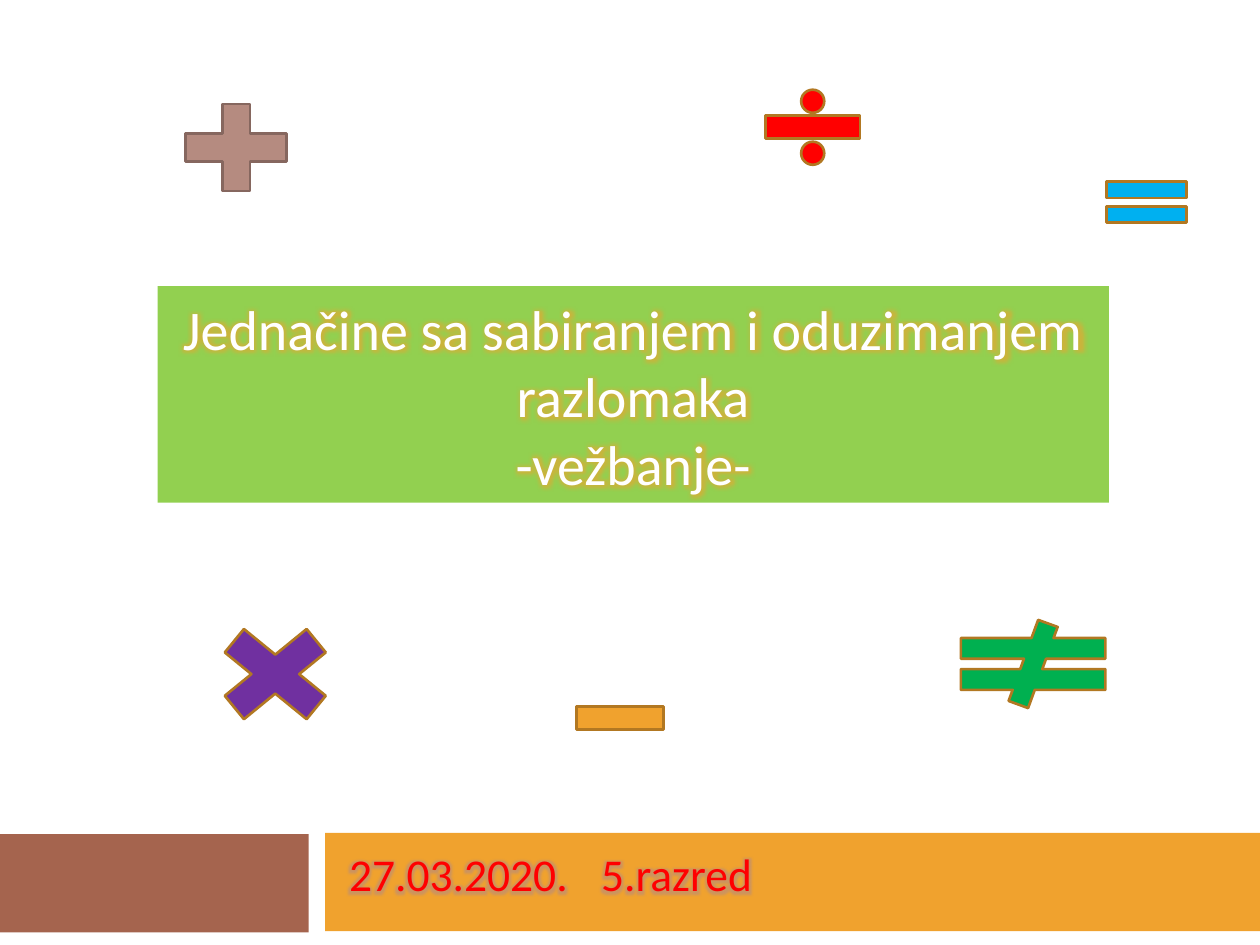
"""Build the title slide of a lesson on equations with fractions."""
from dataclasses import dataclass

from lxml import etree
from pptx import Presentation
from pptx.dml.color import RGBColor
from pptx.enum.shapes import MSO_SHAPE
from pptx.enum.text import MSO_ANCHOR, MSO_AUTO_SIZE, PP_ALIGN
from pptx.oxml.ns import qn
from pptx.util import Inches, Pt

RECTANGLE = MSO_SHAPE.RECTANGLE
PLUS = MSO_SHAPE.MATH_PLUS
MINUS = MSO_SHAPE.MATH_MINUS
MULTIPLY = MSO_SHAPE.MATH_MULTIPLY
DIVIDE = MSO_SHAPE.MATH_DIVIDE
EQUAL = MSO_SHAPE.MATH_EQUAL
NOT_EQUAL = MSO_SHAPE.MATH_NOT_EQUAL
LEFT, CENTER = PP_ALIGN.LEFT, PP_ALIGN.CENTER
MIDDLE, BOTTOM = MSO_ANCHOR.MIDDLE, MSO_ANCHOR.BOTTOM
NO_AUTOFIT = MSO_AUTO_SIZE.NONE

FONT = "Calibri"
COLORS = {
    "brown": "A5644E",
    "orange": "F0A22E",
    "dark orange": "B27822",
    "lime": "92D050",
    "rose": "B58B80",
    "dark rose": "86675F",
    "purple": "7030A0",
    "red": "FF0000",
    "blue": "00B0F0",
    "green": "00B050",
    "white": "FFFFFF",
}


@dataclass
class Figure:
    """A preset shape with its place in inches and its colours."""

    kind: MSO_SHAPE
    left: float
    top: float
    width: float
    height: float
    fill: str
    line: str = ""


@dataclass
class Caption:
    """The text, place and look of a placeholder."""

    text: str
    left: float
    top: float
    width: float
    height: float
    size: int
    color: str
    glow: str
    align: PP_ALIGN
    anchor: MSO_ANCHOR


BANDS = [
    Figure(RECTANGLE, -0.01, 6.62, 2.46, 0.78, "brown"),
    Figure(RECTANGLE, 2.58, 6.61, 7.42, 0.78, "orange"),
]
SYMBOLS = [
    Figure(PLUS, 1.33, 0.7, 1.09, 0.94, "rose", "dark rose"),
    Figure(MINUS, 4.45, 5.31, 0.94, 0.78, "orange", "dark orange"),
    Figure(MULTIPLY, 1.56, 4.84, 1.25, 1.02, "purple", "dark orange"),
    Figure(DIVIDE, 5.94, 0.62, 1.02, 0.78, "red", "dark orange"),
    Figure(EQUAL, 8.67, 1.33, 0.86, 0.55, "blue", "dark orange"),
    Figure(NOT_EQUAL, 7.42, 4.92, 1.56, 0.7, "green", "dark orange"),
]
TITLE = Caption("Jednačine sa sabiranjem i oduzimanjem razlomaka\v-vežbanje-",
                1.25, 2.27, 7.55, 1.72, 32, "white", "orange", CENTER, BOTTOM)
SUBTITLE = Caption("27.03.2020.\t5.razred",
                   2.67, 6.56, 7.33, 0.75, 26, "red", "rose", LEFT, MIDDLE)


def rgb(name: str) -> RGBColor:
    """Return the named colour."""
    return RGBColor.from_string(COLORS[name])


def draw_figure(page, figure: Figure) -> None:
    """Add one filled shape, outlined if it names a line colour."""
    shape = page.shapes.add_shape(
        figure.kind, Inches(figure.left), Inches(figure.top),
        Inches(figure.width), Inches(figure.height))
    shape.shadow.inherit = False
    shape.fill.solid()
    shape.fill.fore_color.rgb = rgb(figure.fill)
    if figure.line:
        shape.line.color.rgb = rgb(figure.line)
        shape.line.width = Pt(1.5)
    else:
        shape.line.fill.background()


def add_glow(span, color: str) -> None:
    """Give a run a soft coloured glow."""
    effects = etree.Element(qn("a:effectLst"))
    glow = etree.SubElement(effects, qn("a:glow"), rad=str(Pt(8)))
    tint = etree.SubElement(glow, qn("a:srgbClr"), val=COLORS[color])
    etree.SubElement(tint, qn("a:alpha"), val="60000")
    span.font.fill._xPr.find(qn("a:solidFill")).addnext(effects)


def add_tab_stop(para, position: float) -> None:
    """Set a left tab stop, in inches from the text edge."""
    stops = etree.SubElement(para._p.get_or_add_pPr(), qn("a:tabLst"))
    etree.SubElement(stops, qn("a:tab"), pos=str(Inches(position)), algn="l")


def fill_placeholder(box, caption: Caption):
    """Place and format a placeholder, and return its paragraph."""
    box.left, box.top = Inches(caption.left), Inches(caption.top)
    box.width, box.height = Inches(caption.width), Inches(caption.height)
    frame = box.text_frame
    frame.word_wrap = True
    frame.auto_size = NO_AUTOFIT
    frame.vertical_anchor = caption.anchor
    para = frame.paragraphs[0]
    para.text = caption.text
    para.alignment = caption.align
    for span in para.runs:
        span.font.name = FONT
        span.font.size = Pt(caption.size)
        span.font.color.rgb = rgb(caption.color)
        add_glow(span, caption.glow)
    return para


def main() -> None:
    """Build and save the deck."""
    deck = Presentation()
    deck.slide_width, deck.slide_height = Inches(10), Inches(7.5)
    page = deck.slides.add_slide(deck.slide_layouts[0])
    title, subtitle = page.placeholders
    for band in BANDS:
        draw_figure(page, band)
    for box in (title, subtitle):
        page.shapes._spTree.append(box._element)
    title.fill.solid()
    title.fill.fore_color.rgb = rgb("lime")
    fill_placeholder(title, TITLE)
    date_line = fill_placeholder(subtitle, SUBTITLE)
    date_line.space_before = Pt(7)
    add_tab_stop(date_line, 3.61)
    for symbol in SYMBOLS:
        draw_figure(page, symbol)
    deck.save("out.pptx")


if __name__ == "__main__":
    main()
